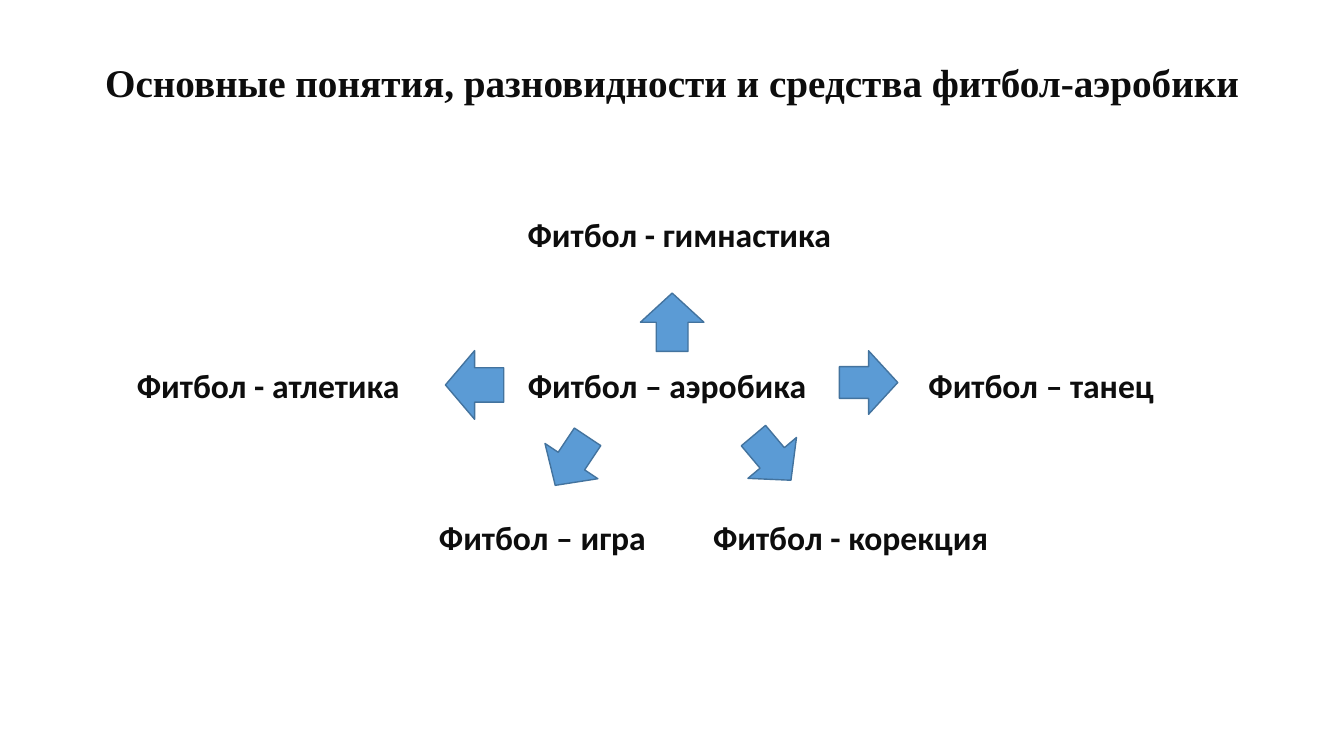
from pptx import Presentation
from pptx.dml.color import RGBColor
from pptx.enum.shapes import MSO_SHAPE
from pptx.enum.text import MSO_ANCHOR, PP_ALIGN
from pptx.util import Cm, Pt

INK = RGBColor(0x0D, 0x0D, 0x0D)
ARROW_FILL = RGBColor(0x5B, 0x9B, 0xD5)
ARROW_LINE = RGBColor(0x43, 0x73, 0x9E)

SLIDE_WIDTH, SLIDE_HEIGHT = 33.87, 19.05
LABEL_WIDTH, LABEL_HEIGHT = 9, 1.3
ARROW_LENGTH = 1.47
ROW_GAP = 3.81

HUB = "Фитбол – аэробика"
# label, its offset from the hub, arrow offset from the hub, arrow height, rotation
BRANCHES = [
    ("Фитбол - гимнастика", (0.31, -ROW_GAP), (0.13, -1.66), 1.6, 270),
    ("Фитбол - атлетика", (-10.05, 0), (-4.85, -0.08), 1.73, 180),
    ("Фитбол – танец", (9.43, 0), (5.08, -0.14), 1.6, 0),
    ("Фитбол – игра", (-3.14, ROW_GAP), (-2.41, 1.84), 1.6, 123.7),
    ("Фитбол - корекция", (4.63, ROW_GAP), (2.65, 1.76), 1.6, 49.9),
]


def centred_box(x, y, width, height):
    """Return left, top, width and height of a box centred on x, y (cm)."""
    return Cm(x - width / 2), Cm(y - height / 2), Cm(width), Cm(height)


def write_line(frame, wording, font_name, size, anchor):
    frame.word_wrap = True
    frame.vertical_anchor = anchor
    line = frame.paragraphs[0]
    line.text = wording
    line.alignment = PP_ALIGN.CENTER
    line.line_spacing = 0.9
    line.font.name = font_name
    line.font.size = Pt(size)
    line.font.bold = True
    line.font.color.rgb = INK


def add_heading(slide, left, top, width, height):
    heading = slide.shapes.title
    heading.left, heading.top = Cm(left), Cm(top)
    heading.width, heading.height = Cm(width), Cm(height)
    write_line(heading.text_frame,
               "Основные понятия, разновидности и средства фитбол-аэробики",
               "Times New Roman", 28, MSO_ANCHOR.BOTTOM)


def add_label(slide, wording, x, y):
    label = slide.shapes.add_textbox(*centred_box(x, y, LABEL_WIDTH, LABEL_HEIGHT))
    write_line(label.text_frame, wording, "Calibri", 24, MSO_ANCHOR.MIDDLE)


def add_arrow(slide, x, y, height, rotation):
    arrow = slide.shapes.add_shape(
        MSO_SHAPE.RIGHT_ARROW, *centred_box(x, y, ARROW_LENGTH, height))
    arrow.rotation = rotation
    arrow.shadow.inherit = False
    arrow.fill.solid()
    arrow.fill.fore_color.rgb = ARROW_FILL
    arrow.line.color.rgb = ARROW_LINE
    arrow.line.width = Pt(1)


def add_branch_diagram(slide, left, top, width, height):
    """Place the hub in the middle of the box and the branches around it."""
    hub_x, hub_y = left + width / 2, top + height / 2
    add_label(slide, HUB, hub_x, hub_y)
    for wording, (label_dx, label_dy), (arrow_dx, arrow_dy), arrow_height, rotation in BRANCHES:
        add_label(slide, wording, hub_x + label_dx, hub_y + label_dy)
        add_arrow(slide, hub_x + arrow_dx, hub_y + arrow_dy, arrow_height, rotation)


def main():
    deck = Presentation()
    deck.slide_width, deck.slide_height = Cm(SLIDE_WIDTH), Cm(SLIDE_HEIGHT)
    slide = deck.slides.add_slide(deck.slide_layouts.get_by_name("Title Only"))
    add_heading(slide, 0, 0, SLIDE_WIDTH, 2.79)
    add_branch_diagram(slide, 0, 2.79, 33.62, 13.98)
    deck.save("out.pptx")


if __name__ == "__main__":
    main()
